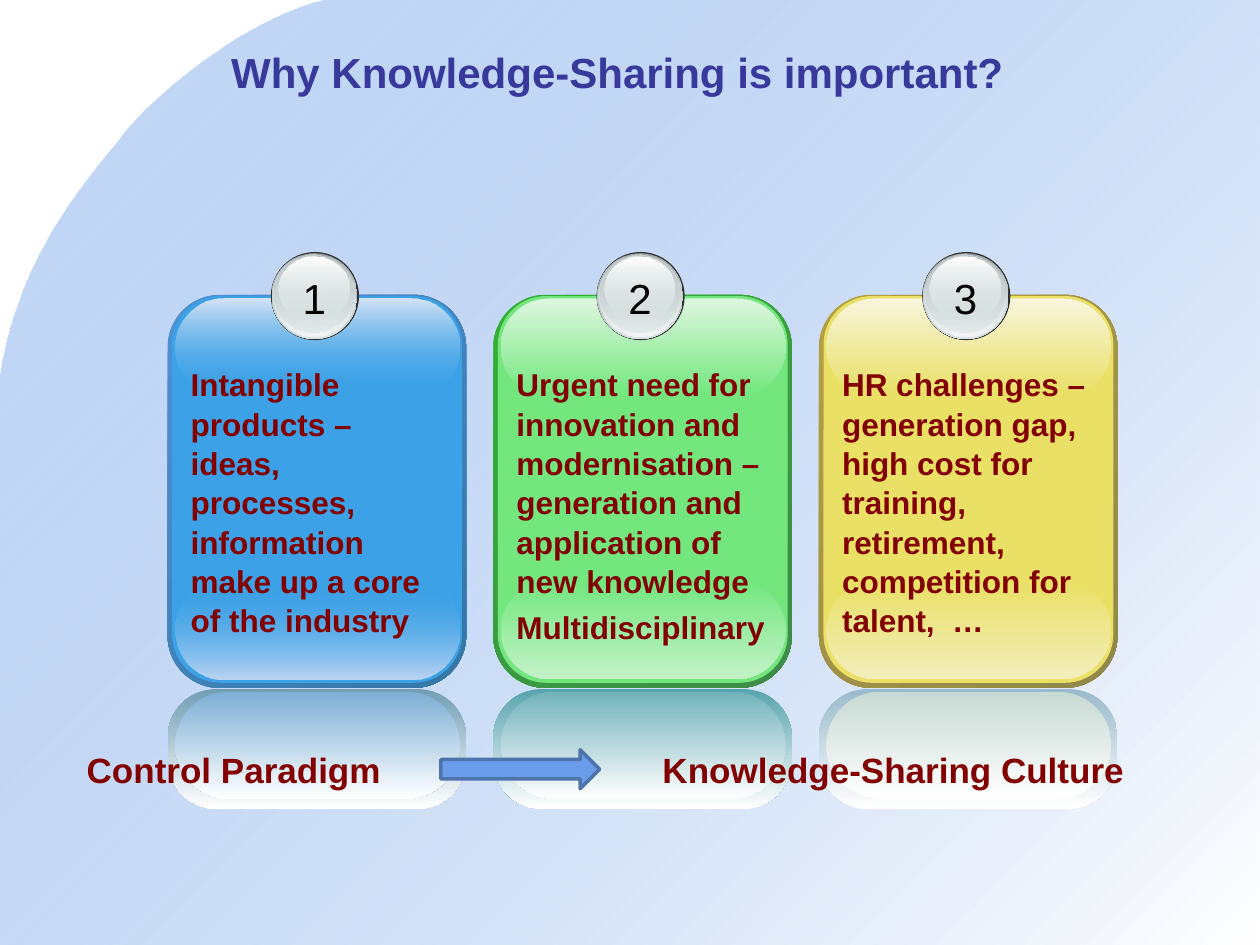
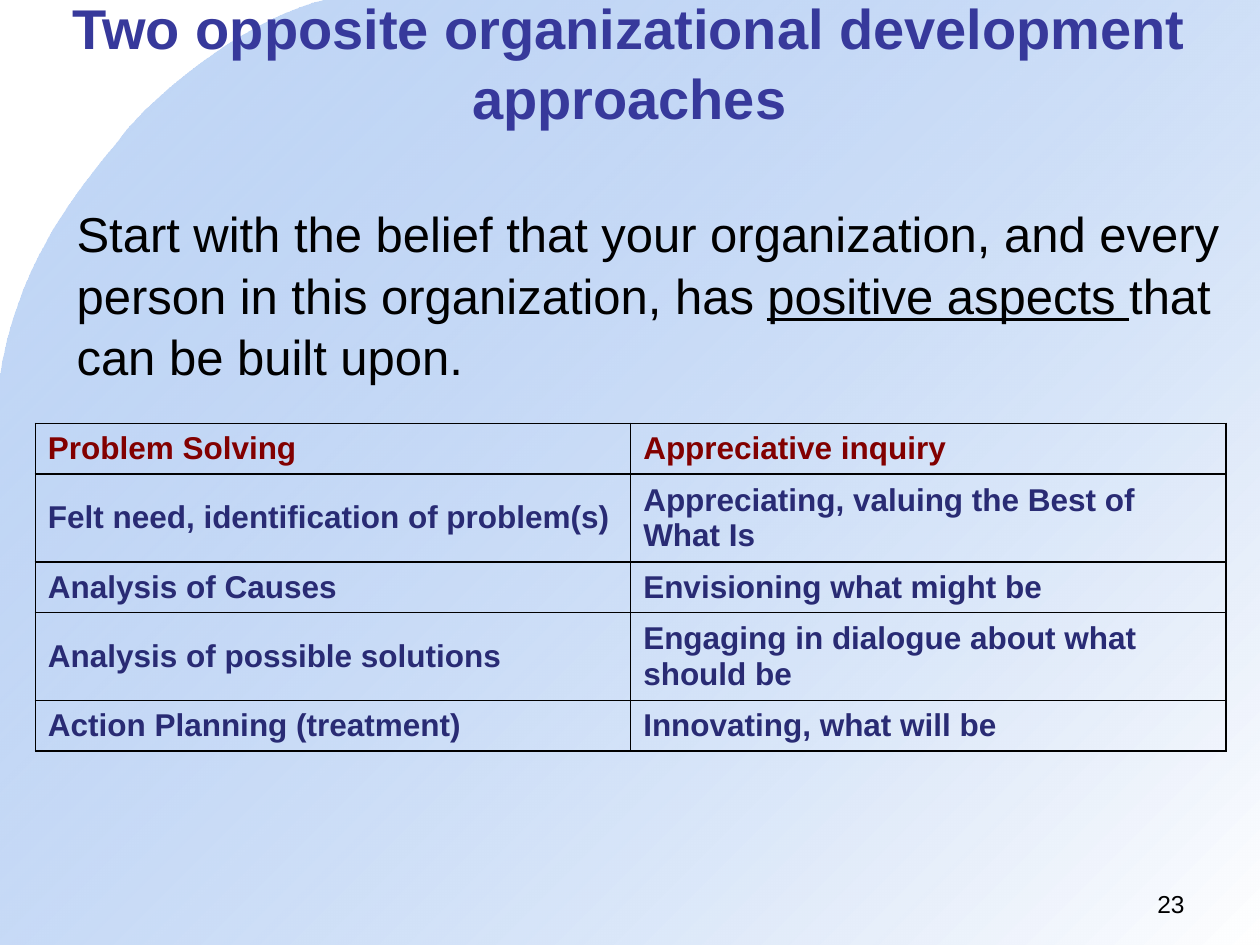
from dataclasses import dataclass
from typing import Any, Optional

from lxml import etree
from pptx import Presentation
from pptx.dml.color import RGBColor
from pptx.enum.shapes import MSO_SHAPE
from pptx.enum.text import MSO_ANCHOR, MSO_AUTO_SIZE, PP_ALIGN
from pptx.oxml import parse_xml
from pptx.oxml.ns import nsdecls, qn
from pptx.util import Pt

FONT = "Arial"
LEAD = 1.04  # line spacing of running text
WIDE, HIGH = 720, 540

HUES = {
    "title": "37399B", "accent": "820000", "cell": "292B74",
    "black": "000000", "white": "FFFFFF", "sky": "699DE9", "edge": "4E74AC",
    "ring": "333333", "steel": "99A1A2", "mist": "D6E1E2",
    "pale": "F2F5F5", "ash": "C1CBCC",
    "blue rim": "4E91D4", "blue foot": "3477A4", "blue face": "3CA1E6",
    "blue low": "BDD6F3", "blue high": "D7E5F7",
    "blue cast": "729EB4", "blue glow": "7DAFD4",
    "green rim": "34B034", "green foot": "3F8B4A", "green face": "73E77E",
    "green low": "C3F2C7", "green high": "DDF7DF",
    "green cast": "58A4AE", "green glow": "72B2BB",
    "gold rim": "B59F43", "gold foot": "8F8849", "gold face": "E9E065",
    "gold low": "F3EEBB", "gold high": "F8F5DB",
    "gold cast": "99BACC", "gold glow": "C8DAD4",
}


@dataclass(frozen=True)
class Box:
    x: float
    y: float
    w: float
    h: float

    def shift(self, dx: float) -> "Box":
        return Box(self.x + dx, self.y, self.w, self.h)

    def pts(self) -> tuple:
        return Pt(self.x), Pt(self.y), Pt(self.w), Pt(self.h)


@dataclass(frozen=True)
class Tint:
    hue: str
    alpha: int = 100


@dataclass(frozen=True)
class Layer:
    box: Box
    start: Tint
    end: Optional[Tint] = None
    angle: int = 90
    round: Optional[float] = None  # None draws an ellipse


@dataclass(frozen=True)
class Card:
    tone: str
    veil: int  # opacity of the inner end of the gloss
    lines: tuple


@dataclass(frozen=True)
class Style:
    size: float
    hue: str
    bold: bool = False
    align: Any = PP_ALIGN.LEFT


CARDS = (
    Card("blue", 0, ("Intangible products – ideas, processes, information "
                     "make up a core of the industry",)),
    Card("green", 100, ("Urgent need for innovation and modernisation – "
                        "generation and application of new knowledge",
                        "Multidisciplinary")),
    Card("gold", 100, ("HR challenges – generation gap, high cost for training, "
                       "retirement, competition for talent,  …",)),
)
CARD_X, STEP = 95.8, 186.1

BADGE = (
    Layer(Box(59, 144, 50.4, 50.4), Tint("ring")),
    Layer(Box(59.4, 144.7, 49, 49), Tint("steel"), Tint("mist")),
    Layer(Box(60, 144.7, 47.5, 47.5), Tint("mist", 0), Tint("pale")),
    Layer(Box(60.7, 145.4, 45.4, 44.6), Tint("ash"), Tint("mist", 48)),
    Layer(Box(63.4, 146.9, 40.3, 36), Tint("white"), Tint("mist", 38)),
)

ROWS = (
    ("Problem Solving", "Appreciative inquiry"),
    ("Felt need, identification of problem(s)",
     "Appreciating, valuing the Best of What Is"),
    ("Analysis of Causes", "Envisioning what might be"),
    ("Analysis of possible solutions",
     "Engaging in dialogue about what should be"),
    ("Action Planning (treatment)", "Innovating, what will be"),
)
ROW_H = (28.8, 50.2, 28.8, 50.2, 28.8)


# Fills and text
def rgb(hue: str) -> RGBColor:
    return RGBColor.from_string(HUES[hue])


def blend(shape: Any, start: Tint, end: Tint, angle: int) -> None:
    """Give a shape a linear gradient with opacity at each end."""
    stops = "".join(
        f'<a:gs pos="{pos}"><a:srgbClr val="{HUES[tint.hue]}">'
        f'<a:alpha val="{tint.alpha * 1000}"/></a:srgbClr></a:gs>'
        for pos, tint in ((0, start), (100000, end)))
    shape.fill.background()
    blank = shape.element.spPr.find(qn("a:noFill"))
    blank.getparent().replace(blank, parse_xml(
        f'<a:gradFill {nsdecls("a")} rotWithShape="1"><a:gsLst>{stops}</a:gsLst>'
        f'<a:lin ang="{angle * 60000}" scaled="0"/></a:gradFill>'))


def paint(shape: Any, start: Tint, end: Optional[Tint], angle: int) -> None:
    shape.shadow.inherit = False
    shape.line.fill.background()
    if end:
        blend(shape, start, end, angle)
    else:
        shape.fill.solid()
        shape.fill.fore_color.rgb = rgb(start.hue)


def dress(frame: Any, style: Style, lead: Optional[float] = LEAD) -> None:
    for para in frame.paragraphs:
        para.alignment = style.align
        if lead:
            para.line_spacing = lead
        for run in para.runs:
            run.font.name = FONT
            run.font.size = Pt(style.size)
            run.font.bold = style.bold
            run.font.color.rgb = rgb(style.hue)


def write(shapes: Any, box: Box, lines: tuple, style: Style,
          wrap: bool = True) -> Any:
    frame = shapes.add_textbox(*box.pts()).text_frame
    frame.word_wrap = wrap
    frame.text = lines[0]
    for line in lines[1:]:
        para = frame.add_paragraph()
        para.text = line
        para.space_before = Pt(style.size * 0.2)
    dress(frame, style)
    return frame


def head(slide: Any, text: str, box: Box, size: float) -> None:
    title = slide.shapes.title
    title.left, title.top, title.width, title.height = box.pts()
    frame = title.text_frame
    frame.text = text
    frame.word_wrap = True
    frame.auto_size = MSO_AUTO_SIZE.NONE
    frame.vertical_anchor = MSO_ANCHOR.MIDDLE
    dress(frame, Style(size, "title", True, PP_ALIGN.CENTER))


# Shared backdrop
def curve(p: tuple, q: tuple, r: tuple, s: tuple, count: int = 20) -> list:
    """Points along a cubic curve, without its first one."""
    spots = []
    for i in range(1, count + 1):
        t = i / count
        u = 1 - t
        spots.append(tuple(
            u ** 3 * a + 3 * u * u * t * b + 3 * u * t * t * c + t ** 3 * d
            for a, b, c, d in zip(p, q, r, s)))
    return spots


def sweep(slide: Any) -> None:
    """Draw the curved backdrop and move it to the layout."""
    top, bend, side = (185.8, 0), (70.6, 77), (0, 216.7)
    edge = curve(top, (136.8, 11.5), (83.5, 59.8), bend)
    edge += curve(bend, (57.6, 95), (11.5, 139.7), side)
    edge += [(0, HIGH), (WIDE, HIGH), (WIDE, 0)]
    pen = slide.shapes.build_freeform(Pt(top[0]), Pt(top[1]))
    pen.add_line_segments([(Pt(x), Pt(y)) for x, y in edge], close=True)
    shape = pen.convert_to_shape()
    paint(shape, Tint("sky", 39), Tint("white"), 45)
    slide.slide_layout.shapes.element.insert(2, shape.element)


# Cards
def stack(card: Card) -> tuple:
    """Layers of one card, from back to front."""
    def tint(part: str, alpha: int = 100) -> Tint:
        return Tint(f"{card.tone} {part}", alpha)

    veil, white = tint("face", card.veil), Tint("white")
    return (
        Layer(Box(0, 168.5, 170.6, 224.6), tint("rim"), tint("foot"), 45, 0.175),
        Layer(Box(2.6, 169.2, 165.6, 221), tint("face"), round=0.167),
        Layer(Box(4.3, 331.9, 162.7, 56.2), veil, tint("low"), round=0.5),
        Layer(Box(4.3, 170.6, 162.7, 55.4), tint("high"), veil, round=0.5),
        Layer(Box(0, 393.8, 170.6, 68.4), tint("cast"), white, round=0.404),
        Layer(Box(4.3, 395.3, 162.7, 61.2), tint("glow"), white, round=0.5),
    ) + BADGE


def draw(shapes: Any, layer: Layer, dx: float) -> None:
    kind = MSO_SHAPE.OVAL if layer.round is None else MSO_SHAPE.ROUNDED_RECTANGLE
    shape = shapes.add_shape(kind, *layer.box.shift(dx).pts())
    if layer.round is not None:
        shape.adjustments[0] = layer.round
    paint(shape, layer.start, layer.end, layer.angle)


def deal(slide: Any) -> None:
    for i, card in enumerate(CARDS):
        dx = CARD_X + i * STEP
        shapes = slide.shapes.add_group_shape().shapes
        for layer in stack(card):
            draw(shapes, layer, dx)
        write(shapes, Box(69.8, 151.2, 28, 36).shift(dx), (str(i + 1),),
              Style(24, "black", align=PP_ALIGN.CENTER), wrap=False)
        write(shapes, Box(6.1, 204.5, 162, 160).shift(dx), card.lines,
              Style(18, "accent", True))


# Table
def rule(cell: Any) -> None:
    """Give a cell a thin black border on all sides."""
    props = cell._tc.get_or_add_tcPr()
    for i, side in enumerate(("lnL", "lnR", "lnT", "lnB")):
        line = etree.Element(qn(f"a:{side}"), w=str(Pt(1)))
        fill = etree.SubElement(line, qn("a:solidFill"))
        etree.SubElement(fill, qn("a:srgbClr"), val=HUES["black"])
        props.insert(i, line)


def grid(slide: Any, box: Box) -> None:
    table = slide.shapes.add_table(len(ROWS), 2, *box.pts()).table
    table.first_row = table.horz_banding = False
    for col in table.columns:
        col.width = Pt(box.w / 2)
    for r, row in enumerate(ROWS):
        table.rows[r].height = Pt(ROW_H[r])
        for c, text in enumerate(row):
            cell = table.cell(r, c)
            cell.text_frame.text = text
            cell.vertical_anchor = MSO_ANCHOR.MIDDLE
            cell.fill.background()
            rule(cell)
            hue = "cell" if r else "accent"
            dress(cell.text_frame, Style(18, hue, True), lead=None)


# Slides
def reasons(slide: Any) -> None:
    deal(slide)
    head(slide, "Why Knowledge-Sharing is important?", Box(0, 18, 705.6, 44.6), 24)
    style = Style(20, "accent", True)
    write(slide.shapes, Box(42.5, 423.4, 203.8, 31.7), ("Control Paradigm",), style)
    write(slide.shapes, Box(371.5, 423.4, 280.8, 31.7),
          ("Knowledge-Sharing Culture",), style, wrap=False)
    arrow = slide.shapes.add_shape(MSO_SHAPE.RIGHT_ARROW,
                                   *Box(252, 428.4, 90.7, 22.3).pts())
    paint(arrow, Tint("sky"), None, 0)
    arrow.line.color.rgb = rgb("edge")
    arrow.line.width = Pt(2)


def methods(slide: Any) -> None:
    write(slide.shapes, Box(516.2, 504, 167.8, 25.2), ("23",),
          Style(14, "black", align=PP_ALIGN.RIGHT))
    head(slide, "Two opposite organizational development approaches",
         Box(20.9, 0, 677.5, 69.1), 32)
    style = Style(28, "black")
    frame = write(slide.shapes, Box(36.7, 111.6, 674.6, 108.7),
                  ("Start with the belief that your organization, and every "
                   "person in this organization, has ",), style)
    para = frame.paragraphs[0]
    for text, under in (("positive aspects ", True),
                        ("that can be built upon.", False)):
        run = para.add_run()
        run.text = text
        run.font.underline = under
    dress(frame, style)
    grid(slide, Box(20.2, 241.9, 680.4, sum(ROW_H)))


def main() -> None:
    deck = Presentation()
    deck.slide_width, deck.slide_height = Pt(WIDE), Pt(HIGH)
    layout = deck.slide_layouts[5]
    first, second = (deck.slides.add_slide(layout) for _ in range(2))
    sweep(first)
    reasons(first)
    methods(second)
    deck.save("out.pptx")


if __name__ == "__main__":
    main()
